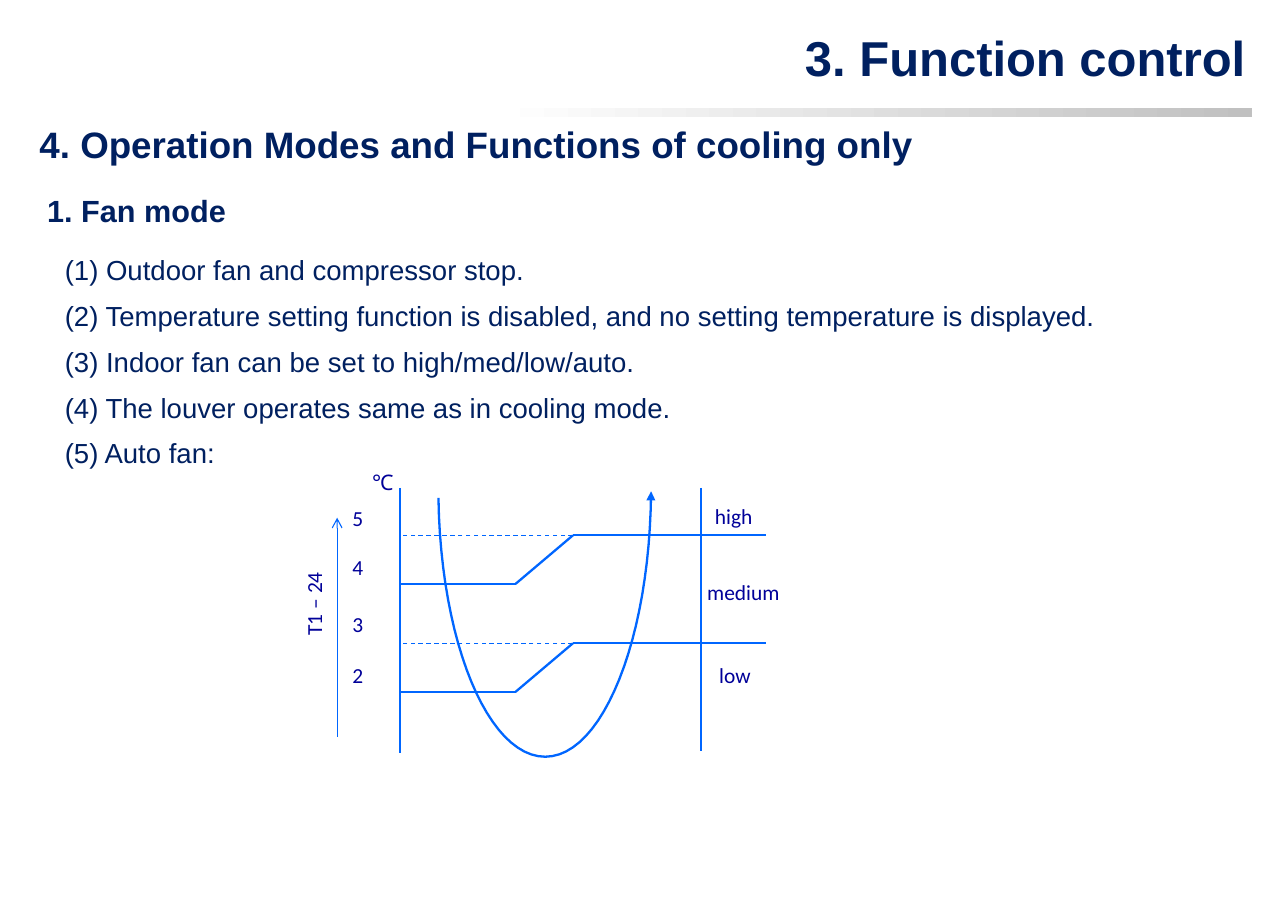
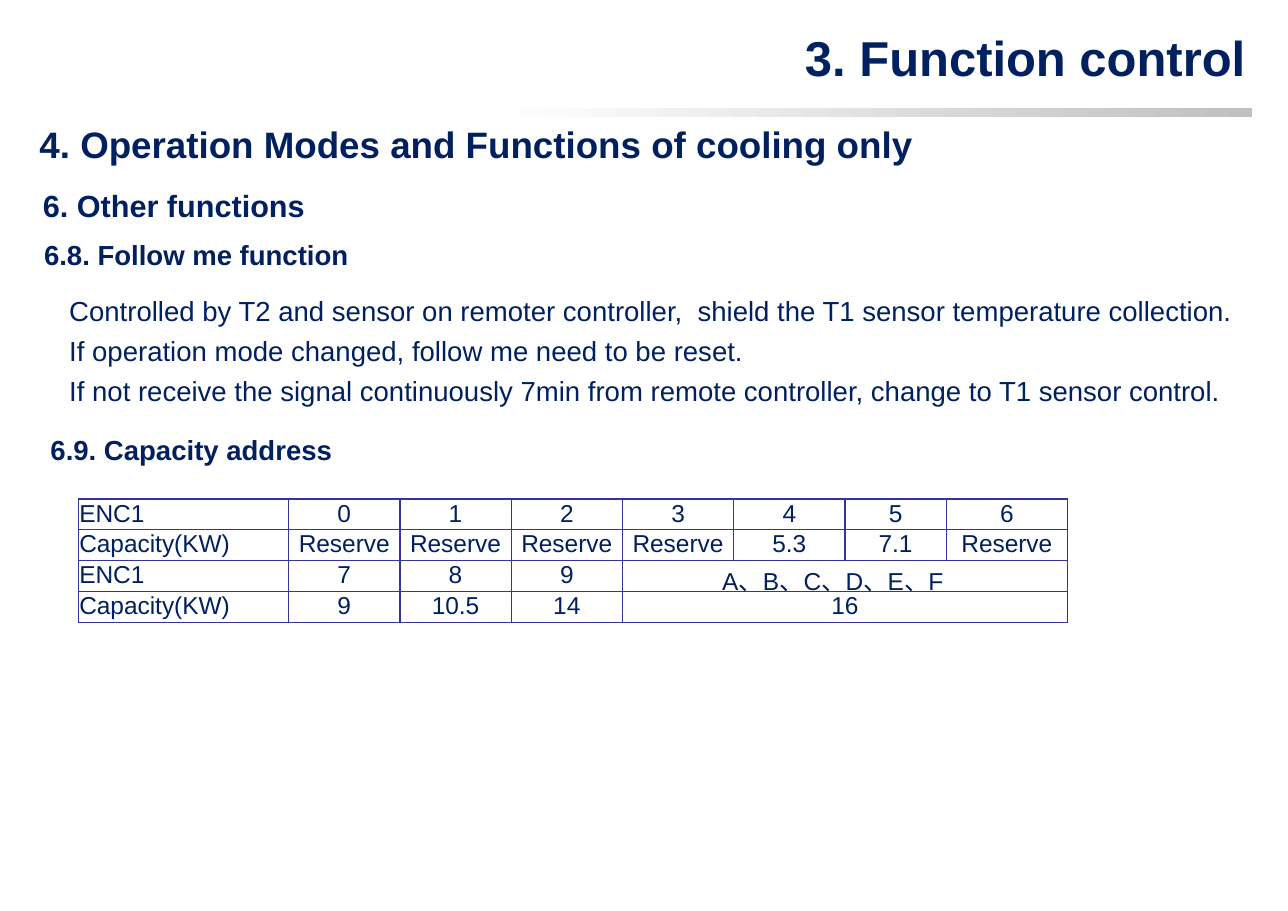
from dataclasses import dataclass
from itertools import pairwise

from lxml.etree import SubElement
from pptx import Presentation
from pptx.dml.color import RGBColor
from pptx.enum.dml import MSO_LINE
from pptx.enum.shapes import MSO_CONNECTOR, MSO_SHAPE
from pptx.enum.text import MSO_AUTO_SIZE, PP_ALIGN
from pptx.oxml.ns import qn
from pptx.slide import Slide
from pptx.util import Inches, Pt

COLORS = {
    "navy": "002060",
    "label": "000099",
    "line": "0066FF",
    "border": "333399",
    "band_start": "FFFFFF",
    "band_end": "C0C0C0",
}

# Font values and colour of each text role
FONTS = {
    "title": {"name": "Arial", "size": Pt(32), "bold": True},
    "section": {"name": "Arial", "size": Pt(24), "bold": True},
    "topic": {"name": "Arial", "size": Pt(20), "bold": True},
    "subtopic": {"name": "Arial", "size": Pt(18), "bold": True},
    "body": {"name": "Arial", "size": Pt(18), "bold": False},
    "cell": {"name": "Arial", "size": Pt(16), "bold": False},
    "label": {"name": "Calibri", "size": Pt(14), "bold": False},
}

TITLE = "3. Function control"
SECTION = "4. Operation Modes and Functions of cooling only"
HANGING = {"marL": Inches(0.38), "indent": Inches(-0.2)}
Point = tuple[float, float]


@dataclass
class TextBlock:
    left: float
    top: float
    width: float
    height: float
    lines: list[str]
    role: str
    wrap: bool = True
    line_pitch: int | None = None
    hanging: bool = False
    align: PP_ALIGN | None = None
    left_inset: float = 0.1
    vertical: bool = False


@dataclass
class Stroke:
    start: Point
    end: Point
    weight: float = 1.5
    dashed: bool = False
    arrow: bool = False


def rgb(key: str) -> RGBColor:
    return RGBColor.from_string(COLORS[key])


def apply_font(paragraph, role: str) -> None:
    for attribute, value in FONTS[role].items():
        setattr(paragraph.font, attribute, value)
    paragraph.font.color.rgb = rgb("label" if role == "label" else "navy")


def draw_text(slide: Slide, block: TextBlock) -> None:
    place = map(Inches, (block.left, block.top, block.width, block.height))
    frame = slide.shapes.add_textbox(*place).text_frame
    is_label = block.role == "label"
    settings = {
        "word_wrap": block.wrap,
        "auto_size": MSO_AUTO_SIZE.NONE if is_label else MSO_AUTO_SIZE.SHAPE_TO_FIT_TEXT,
        "margin_left": Inches(block.left_inset),
    }
    for attribute, value in settings.items():
        setattr(frame, attribute, value)
    if block.vertical:
        frame._txBody.bodyPr.set("vert", "vert270")
    for index, line in enumerate(block.lines):
        paragraph = frame.add_paragraph() if index else frame.paragraphs[0]
        paragraph.text = line
        paragraph.alignment = block.align
        if block.line_pitch:
            paragraph.line_spacing = Pt(block.line_pitch)
        if is_label:
            paragraph.space_after = Pt(10)
        if block.hanging:
            for attribute, value in HANGING.items():
                paragraph._p.get_or_add_pPr().set(attribute, str(value))
        apply_font(paragraph, block.role)


def draw_stroke(slide: Slide, stroke: Stroke) -> None:
    ends = map(Inches, (*stroke.start, *stroke.end))
    connector = slide.shapes.add_connector(MSO_CONNECTOR.STRAIGHT, *ends)
    connector.line.color.rgb = rgb("line")
    connector.line.width = Pt(stroke.weight)
    if stroke.dashed:
        connector.line.dash_style = MSO_LINE.DASH
    if stroke.arrow:
        SubElement(connector.line._get_or_add_ln(), qn("a:tailEnd"), type="arrow")
    SubElement(connector._element.spPr, qn("a:effectLst"))


def bezier(points: list[Point], steps: int = 24) -> list[Point]:
    """Points along a cubic curve, without its first point."""
    def blend(values, t: float) -> float:
        a, b, c, d = values
        u = 1 - t
        return a * u**3 + 3 * b * u**2 * t + 3 * c * u * t**2 + d * t**3

    xs, ys = zip(*points)
    return [(blend(xs, i / steps), blend(ys, i / steps)) for i in range(1, steps + 1)]


def draw_temperature_curve(slide: Slide) -> None:
    start, bottom, end = (5.91, 4.46), (4.95, 6.87), (3.98, 4.52)
    curve = bezier([start, (5.9, 5.8), (5.47, 6.87), bottom])
    curve += bezier([bottom, (4.43, 6.87), (4, 5.83), end])
    builder = slide.shapes.build_freeform(*map(Inches, start))
    builder.add_line_segments([(Inches(x), Inches(y)) for x, y in curve], close=False)
    outline = builder.convert_to_shape()
    outline.shadow.inherit = False
    outline.fill.background()
    outline.line.color.rgb = rgb("line")
    outline.line.width = Pt(1.5)
    SubElement(outline.line._get_or_add_ln(), qn("a:headEnd"), type="triangle")


def start_slide(deck) -> Slide:
    """Blank slide with the shared band, title and section heading."""
    slide = deck.slides.add_slide(deck.slide_layouts[6])
    band = slide.shapes.add_shape(MSO_SHAPE.RECTANGLE, *map(Inches, (4.51, 0.98, 6.85, 0.08)))
    band.shadow.inherit = False
    band.line.fill.background()
    band.fill.gradient()
    band.fill.gradient_angle = 0
    for stop, key, position in zip(band.fill.gradient_stops, ("band_start", "band_end"), (0, 1)):
        stop.color.rgb = rgb(key)
        stop.position = position
    draw_text(slide, TextBlock(7.18, 0.2, 4.23, 0.64, [TITLE], "title",
                               wrap=False, align=PP_ALIGN.RIGHT))
    draw_text(slide, TextBlock(0.26, 1.06, 9.29, 0.5, [SECTION], "section"))
    return slide


def draw_fan_diagram(slide: Slide) -> None:
    axis_x, limit_x = 3.63, 6.36
    strokes = [
        Stroke((axis_x, 4.43), (axis_x, 6.84)),
        Stroke((limit_x, 4.43), (limit_x, 6.82)),
        Stroke((3.06, 6.69), (3.06, 4.7), weight=0.75, arrow=True),
    ]
    # Switching steps between neighbouring fan speeds
    for upper in (4.86, 5.84):
        lower = upper + 0.44
        step = [(axis_x, lower), (4.68, lower), (5.2, upper), (6.95, upper)]
        strokes += [Stroke(a, b) for a, b in pairwise(step)]
        strokes.append(Stroke((5.2, upper), (axis_x, upper), weight=0.75, dashed=True))
    for stroke in strokes:
        draw_stroke(slide, stroke)
    draw_temperature_curve(slide)

    # Degrees, unit and fan speeds
    labels = [
        ("5", 3.1, 4.54, 0.53), ("4", 3.1, 4.98, 0.53),
        ("3", 3.1, 5.5, 0.53), ("2", 3.1, 5.96, 0.53),
        ("℃", 3.28, 4.21, 0.7), ("high", 6.39, 4.52, 0.7),
        ("medium", 6.32, 5.21, 0.95), ("low", 6.43, 5.96, 0.7),
    ]
    for text, left, top, width in labels:
        draw_text(slide, TextBlock(left, top, width, 0.66, [text], "label"))
    draw_text(slide, TextBlock(2.68, 4.56, 0.53, 1.31, ["T1 – 24"], "label", vertical=True))


def format_cell(cell, align: PP_ALIGN) -> None:
    margins = {"margin_left": 0.01, "margin_right": 0.01, "margin_top": 0.01, "margin_bottom": 0}
    for attribute, value in margins.items():
        setattr(cell, attribute, Inches(value))
    properties = cell._tc.get_or_add_tcPr()
    for side in ("lnL", "lnR", "lnT", "lnB"):
        border = SubElement(properties, qn(f"a:{side}"), w=str(Pt(1)))
        fill = SubElement(border, qn("a:solidFill"))
        SubElement(fill, qn("a:srgbClr"), val=COLORS["border"])
    cell.fill.background()
    paragraph = cell.text_frame.paragraphs[0]
    paragraph.alignment = align
    apply_font(paragraph, "cell")


def draw_capacity_table(slide: Slide) -> None:
    widths = [1.91, *[1.01] * 5, 0.92, 1.1]
    rows = [
        ["ENC1", "0", "1", "2", "3", "4", "5", "6"],
        ["Capacity(KW)", *["Reserve"] * 4, "5.3", "7.1", "Reserve"],
        ["ENC1", "7", "8", "9", "A、B、C、D、E、F　"],
        ["Capacity(KW)", "9", "10.5", "14", "16"],
    ]
    row_height = 0.28
    place = map(Inches, (0.71, 4.53, sum(widths), row_height * len(rows)))
    table = slide.shapes.add_table(len(rows), len(widths), *place).table
    table.first_row = table.horz_banding = False
    for column, width in zip(table.columns, widths):
        column.width = Inches(width)
    for r, values in enumerate(rows):
        table.rows[r].height = Inches(row_height)
        for c, value in enumerate(values):
            table.cell(r, c).text = value
        for c in range(len(widths)):
            format_cell(table.cell(r, c), PP_ALIGN.CENTER if c else PP_ALIGN.JUSTIFY)
        # The last value of a short row fills the remaining columns
        if len(values) < len(widths):
            table.cell(r, len(values) - 1).merge(table.cell(r, len(widths) - 1))


def build_fan_mode(deck) -> None:
    slide = start_slide(deck)
    draw_text(slide, TextBlock(0.33, 1.69, 1.84, 0.44, ["1. Fan mode"], "topic", wrap=False))
    draw_text(slide, TextBlock(0.49, 2.13, 9.84, 2.58, [
        "(1) Outdoor fan and compressor stop.",
        "(2) Temperature setting function is disabled, and no setting temperature is displayed.",
        "(3) Indoor fan can be set to high/med/low/auto.",
        "(4) The louver operates same as in cooling mode.",
        "(5) Auto fan:",
    ], "body", line_pitch=30))
    draw_fan_diagram(slide)


def build_other_functions(deck) -> None:
    slide = start_slide(deck)
    blocks = [
        TextBlock(0.29, 1.65, 2.6, 0.44, ["6. Other functions"], "topic", wrap=False),
        TextBlock(0.2, 2.11, 5.6, 0.4, ["6.8. Follow me function"], "subtopic",
                  hanging=True, left_inset=0.02),
        TextBlock(0.35, 2.56, 11.09, 1.19, [
            "Controlled by T2 and sensor on remoter controller,  shield the T1 sensor "
            "temperature collection.",
            "If operation mode changed, follow me need to be reset.",
            "If not receive the signal continuously 7min from remote controller, "
            "change to T1 sensor control.",
        ], "body", line_pitch=26, hanging=True),
        TextBlock(0.18, 3.88, 3.03, 0.4, ["6.9. Capacity address"], "subtopic",
                  wrap=False, hanging=True),
    ]
    for block in blocks:
        draw_text(slide, block)
    draw_capacity_table(slide)


def main() -> None:
    deck = Presentation()
    deck.slide_width, deck.slide_height = Inches(11.69), Inches(8.27)
    build_fan_mode(deck)
    build_other_functions(deck)
    deck.save("out.pptx")


if __name__ == "__main__":
    main()
